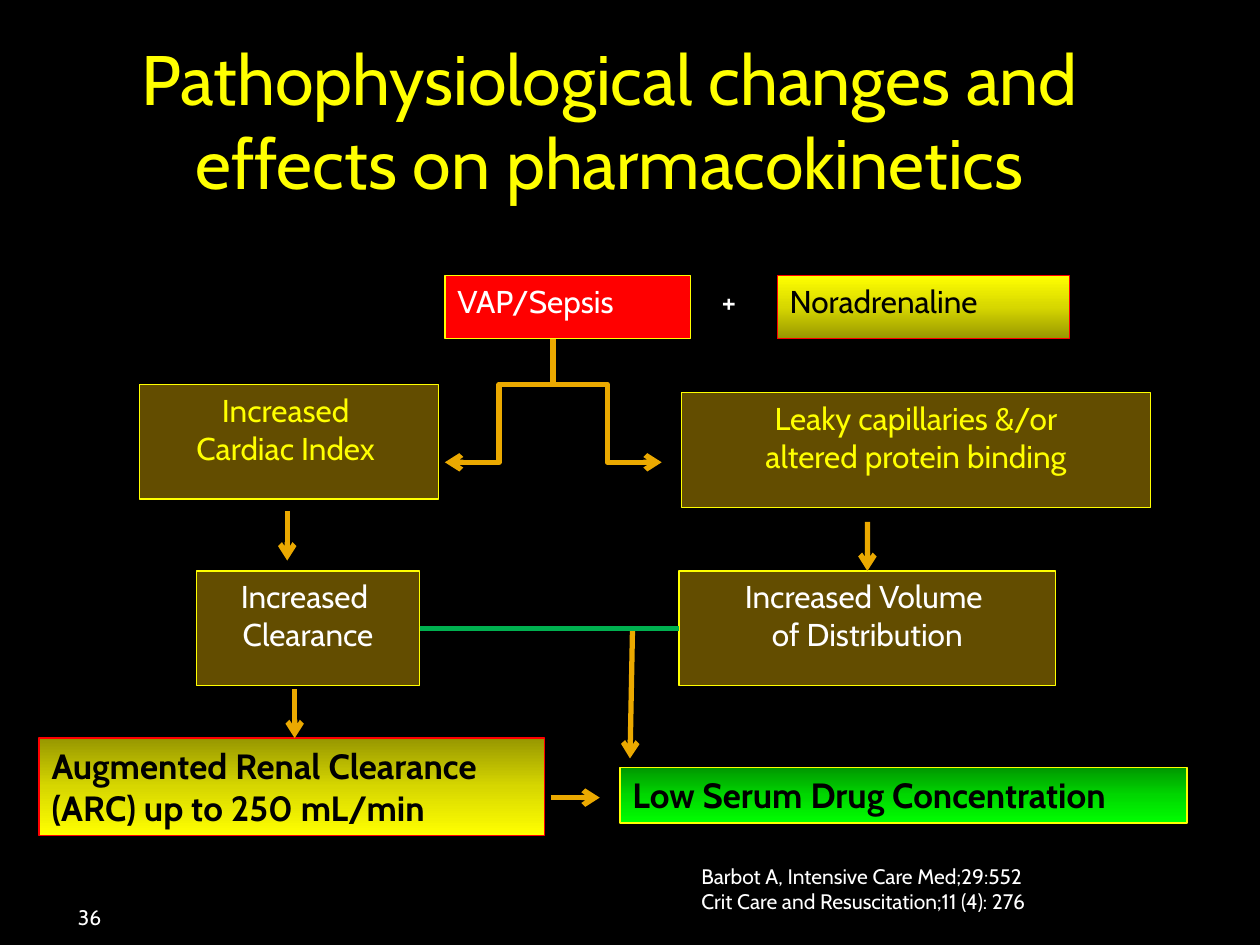
import copy

import pptx
import pptx.dml.color
import pptx.enum.shapes
import pptx.enum.text
import pptx.oxml
import pptx.oxml.ns
import pptx.util

Cm = pptx.util.Cm
Pt = pptx.util.Pt
ALIGN = pptx.enum.text.PP_ALIGN
ANCHOR = pptx.enum.text.MSO_ANCHOR
LINK = pptx.enum.shapes.MSO_CONNECTOR

FONT = "Cabin"
BLACK, WHITE, RED, YELLOW = "000000", "FFFFFF", "FF0000", "FFFF00"
BROWN, ORANGE, GREEN = "634D00", "EBA900", "00B050"
GOLD_RAMP = ("979700", "D7D700", "FFFF00")
GREEN_RAMP = ("009700", "00D700", "00FF00")

TITLE = ["Pathophysiological changes and ", "effects on pharmacokinetics "]
TITLE_PLACE = (1.78, 0.58, 21.34, 3.68)

BOXES = {
    "sepsis": ((8.97, 5.56, 4.95, 1.27), ["VAP/Sepsis"],
               dict(fill=RED), dict(color=WHITE)),
    "cardiac": ((2.82, 7.75, 6.02, 2.31), ["Increased ", "Cardiac Index "],
                dict(fill=BROWN), dict(color=YELLOW, align=ALIGN.CENTER)),
    "leaky": ((13.74, 7.92, 9.45, 2.31),
              ["Leaky capillaries &/or", " altered protein binding "],
              dict(fill=BROWN), dict(color=YELLOW, align=ALIGN.CENTER)),
    "clearance": ((3.96, 11.51, 4.5, 2.31), ["Increased ", "Clearance"],
                  dict(fill=BROWN), dict(color=WHITE, align=ALIGN.CENTER)),
    "volume": ((13.69, 11.51, 7.59, 2.31),
               ["Increased Volume ", "of Distribution"],
               dict(fill=BROWN), dict(color=WHITE, align=ALIGN.CENTER)),
    "low serum": ((12.5, 15.47, 11.43, 1.12), ["Low Serum Drug Concentration"],
                  dict(ramp=GREEN_RAMP), dict(size=20, bold=True)),
    "noradrenaline": ((15.67, 5.56, 5.89, 1.27), ["Noradrenaline"],
                      dict(ramp=GOLD_RAMP, angle=90, line=RED), dict()),
    "renal": ((0.79, 14.88, 10.19, 1.96),
              ["Augmented Renal Clearance", "(ARC) up to 250 mL/min"],
              dict(ramp=GOLD_RAMP, line=RED), dict(size=20, bold=True)),
}

LABELS = [
    ((14.3, 5.56, 0.99, 1.27), ["+"], dict(color=WHITE)),
    ((13.89, 17.27, 7.87, 1.27),
     ["Barbot A, Intensive Care Med;29:552",
      "Crit Care and Resuscitation;11 (4): 276"], dict(size=12, color=WHITE)),
    ((1.27, 17.98, 5.92, 0.76), ["36"],
     dict(size=12, color=WHITE, anchor=ANCHOR.BOTTOM,
          margins=(0.3, 0.13, 0.13, 0))),
]

FORK = (11.15, 7.75)
LINKS = [
    (FORK, (11.15, 6.83), dict(arrow=False)),
    (FORK, (8.97, 9.32), dict(kind=LINK.ELBOW)),
    (FORK, (13.34, 9.32), dict(kind=LINK.ELBOW)),
    ((5.79, 10.31), (5.79, 11.3), dict()),
    ((17.49, 10.52), (17.49, 11.51), dict(end=("volume", 0))),
    ((12.75, 12.7), (12.7, 15.29), dict()),
    ((8.46, 12.67), (13.69, 12.67),
     dict(color=GREEN, arrow=False, begin=("clearance", 3), end=("volume", 1))),
    ((11.1, 16.08), (12.09, 16.08), dict()),
    ((5.94, 13.89), (5.94, 14.88), dict()),
]


def paint(target, color):
    target.rgb = pptx.dml.color.RGBColor.from_string(color)


def write(box, lines, size=18, color=BLACK, bold=False, align=ALIGN.LEFT,
          anchor=ANCHOR.TOP, margins=(0.25, 0.13, 0.25, 0.13)):
    frame = box.text_frame
    frame.word_wrap = True
    frame.auto_size = pptx.enum.text.MSO_AUTO_SIZE.NONE
    frame.vertical_anchor = anchor
    (frame.margin_left, frame.margin_top,
     frame.margin_right, frame.margin_bottom) = map(Cm, margins)
    for index, line in enumerate(lines):
        para = frame.add_paragraph() if index else frame.paragraphs[0]
        para.alignment = align
        span = para.add_run()
        span.text = line
        span.font.name = FONT
        span.font.size = Pt(size)
        span.font.bold = bold
        paint(span.font.color, color)


def shade(fill, ramp, angle):
    fill.gradient()
    fill.gradient_angle = angle
    first = fill.gradient_stops[0]._gs
    first.addnext(copy.deepcopy(first))
    for index, (stop, color) in enumerate(zip(fill.gradient_stops, ramp)):
        stop.position = index / (len(ramp) - 1)
        paint(stop.color, color)


def add_box(page, place, lines, look, style):
    box = page.shapes.add_shape(
        pptx.enum.shapes.MSO_SHAPE.RECTANGLE, *map(Cm, place))
    box.shadow.inherit = False
    if "ramp" in look:
        shade(box.fill, look["ramp"], look.get("angle", 270))
    else:
        box.fill.solid()
        paint(box.fill.fore_color, look["fill"])
    paint(box.line.color, look.get("line", YELLOW))
    box.line.width = Pt(0.75)
    write(box, lines, **style)
    return box


def add_link(page, boxes, start, stop, kind=LINK.STRAIGHT, color=ORANGE,
             arrow=True, begin=None, end=None):
    link = page.shapes.add_connector(kind, *map(Cm, start + stop))
    if begin:
        link.begin_connect(boxes[begin[0]], begin[1])
    if end:
        link.end_connect(boxes[end[0]], end[1])
    paint(link.line.color, color)
    link.line.width = Pt(3)
    properties = link._element.spPr
    if arrow:
        outline = properties.find(pptx.oxml.ns.qn("a:ln"))
        tail = pptx.oxml.parse_xml(
            "<a:tailEnd %s type='arrow'/>" % pptx.oxml.ns.nsdecls("a"))
        outline.append(tail)
    properties.append(pptx.oxml.parse_xml(
        "<a:effectLst %s/>" % pptx.oxml.ns.nsdecls("a")))


def main():
    deck = pptx.Presentation()
    deck.slide_width, deck.slide_height = Cm(25.4), Cm(19.05)
    page = deck.slides.add_slide(deck.slide_layouts[5])
    page.background.fill.solid()
    paint(page.background.fill.fore_color, BLACK)

    title = page.shapes.title
    title.left, title.top, title.width, title.height = map(Cm, TITLE_PLACE)
    write(title, TITLE, size=40, color=YELLOW, align=ALIGN.CENTER)

    boxes = {name: add_box(page, *parts) for name, parts in BOXES.items()}
    for place, lines, style in LABELS:
        write(page.shapes.add_textbox(*map(Cm, place)), lines, **style)
    for start, stop, look in LINKS:
        add_link(page, boxes, start, stop, **look)
    deck.save("out.pptx")


if __name__ == "__main__":
    main()
